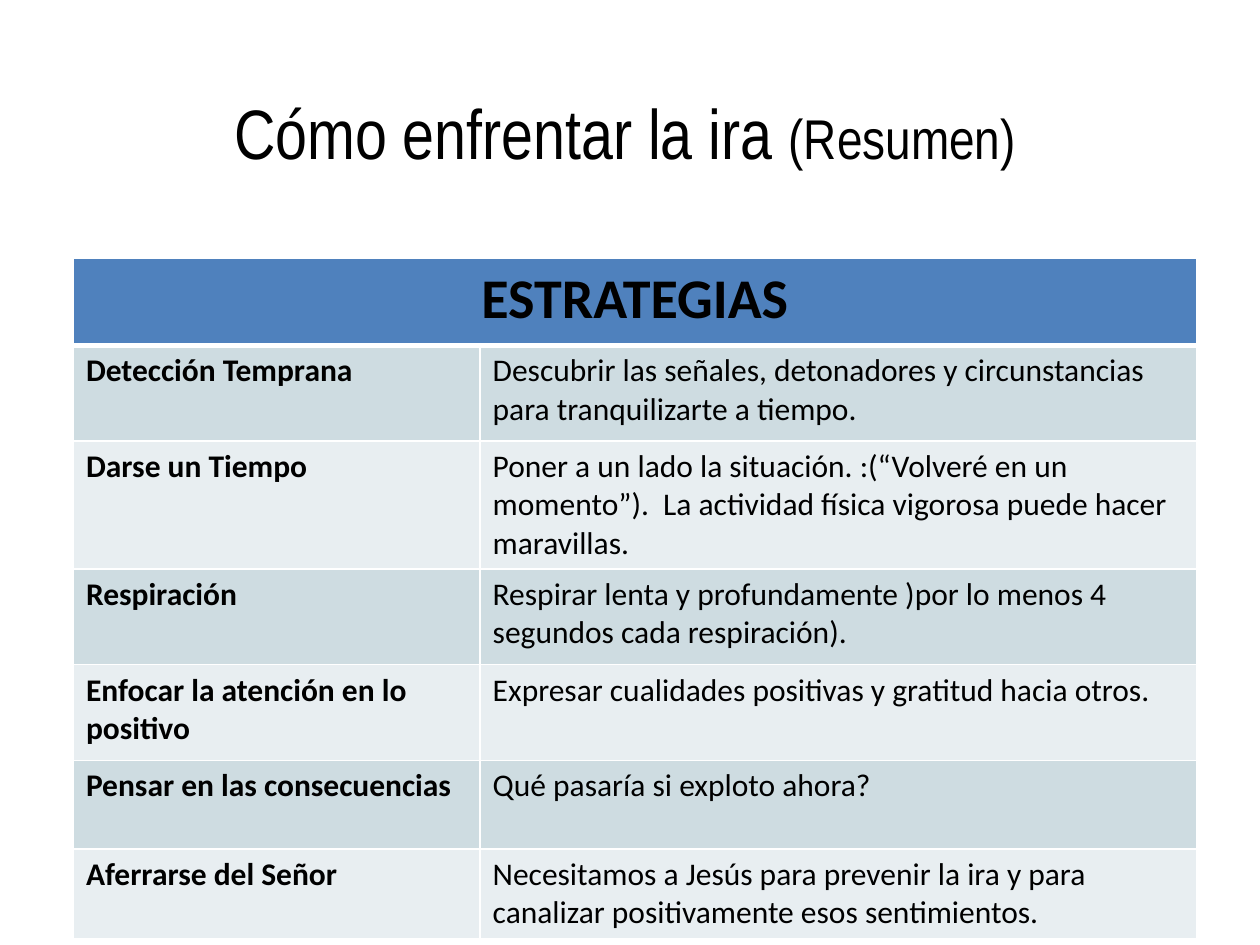
import pptx
import pptx.dml.color
import pptx.enum.text
import pptx.oxml
import pptx.oxml.ns
import pptx.util

Cm = pptx.util.Cm
Pt = pptx.util.Pt
ALIGN = pptx.enum.text.PP_ALIGN
COLORS = {
    "text": "000000",
    "header": "4F81BD",
    "odd": "CEDCE1",
    "even": "E8EEF1",
    "border": "FFFFFF",
}
STRATEGIES = [
    ("Detección Temprana",
     "Descubrir las señales, detonadores y circunstancias para tranquilizarte a tiempo."),
    ("Darse un Tiempo",
     "Poner a un lado la situación. :(“Volveré en un momento”).  "
     "La actividad física vigorosa puede hacer maravillas."),
    ("Respiración",
     "Respirar lenta y profundamente )por lo menos 4 segundos cada respiración)."),
    ("Enfocar la atención en lo positivo",
     "Expresar cualidades positivas y gratitud hacia otros."),
    ("Pensar en las consecuencias", "Qué pasaría si exploto ahora?"),
    ("Aferrarse del Señor",
     "Necesitamos a Jesús para prevenir la ira y para canalizar "
     "positivamente esos sentimientos."),
]


def rgb(name):
    """Return the named colour."""
    return pptx.dml.color.RGBColor.from_string(COLORS[name])


def add_text(para, text, size=18, font="Calibri", bold=False, align=ALIGN.LEFT):
    """Append a formatted span to a paragraph."""
    para.alignment = align
    span = para.add_run()
    span.text = text
    span.font.size = Pt(size)
    span.font.name = font
    span.font.bold = bold
    span.font.color.rgb = rgb("text")


def style_cell(cell, fill, top=1, bottom=1):
    """Fill a cell and draw its borders, with widths in points."""
    cell.fill.solid()
    cell.fill.fore_color.rgb = rgb(fill)
    properties = cell._tc.get_or_add_tcPr()
    widths = {"lnL": 1, "lnR": 1, "lnT": top, "lnB": bottom}
    for index, (side, width) in enumerate(widths.items()):
        line = pptx.oxml.parse_xml(
            f'<a:{side} {pptx.oxml.ns.nsdecls("a")} w="{Pt(width)}"><a:solidFill>'
            f'<a:srgbClr val="{COLORS["border"]}"/></a:solidFill></a:{side}>')
        properties.insert(index, line)


def place_title(page, left, top, width, height):
    """Place the two-size title in the given box."""
    title = page.shapes.title
    title.left, title.top, title.width, title.height = left, top, width, height
    frame = title.text_frame
    frame.margin_left = frame.margin_right = 0
    frame.vertical_anchor = pptx.enum.text.MSO_ANCHOR.MIDDLE
    para = frame.paragraphs[0]
    for text, size in (("Cómo enfrentar la ira ", 40), ("(Resumen)", 32)):
        add_text(para, text, size=size, font="Arial Narrow", align=ALIGN.CENTER)


def place_strategies(page, left, top, width, height):
    """Place the strategy table in the given box."""
    table = page.shapes.add_table(
        len(STRATEGIES) + 1, 2, left, top, width, height).table
    table.columns[0].width = Cm(8.2)
    table.columns[1].width = width - Cm(8.2)
    for row, row_height in zip(table.rows, [1.75] + [1.93] * 4 + [1.78] * 2):
        row.height = Cm(row_height)

    for cell in table.rows[0].cells:
        style_cell(cell, "header", bottom=3)
    header = table.cell(0, 0)
    header.merge(table.cell(0, 1))
    add_text(header.text_frame.paragraphs[0], "ESTRATEGIAS",
             size=32, bold=True, align=ALIGN.CENTER)

    for number, strategy in enumerate(STRATEGIES, 1):
        fill = "odd" if number % 2 else "even"
        for column, text in enumerate(strategy):
            cell = table.cell(number, column)
            style_cell(cell, fill, top=3 if number == 1 else 1)
            add_text(cell.text_frame.paragraphs[0], text, bold=column == 0)


def main():
    """Build and save the deck."""
    deck = pptx.Presentation()
    deck.slide_width, deck.slide_height = Cm(25.4), Cm(19.05)
    page = deck.slides.add_slide(deck.slide_layouts[5])
    place_title(page, Cm(4.45), Cm(1.07), Cm(16.3), Cm(3.18))
    place_strategies(page, Cm(1.48), Cm(5.21), Cm(22.64), Cm(13.03))
    deck.save("out.pptx")


if __name__ == "__main__":
    main()
